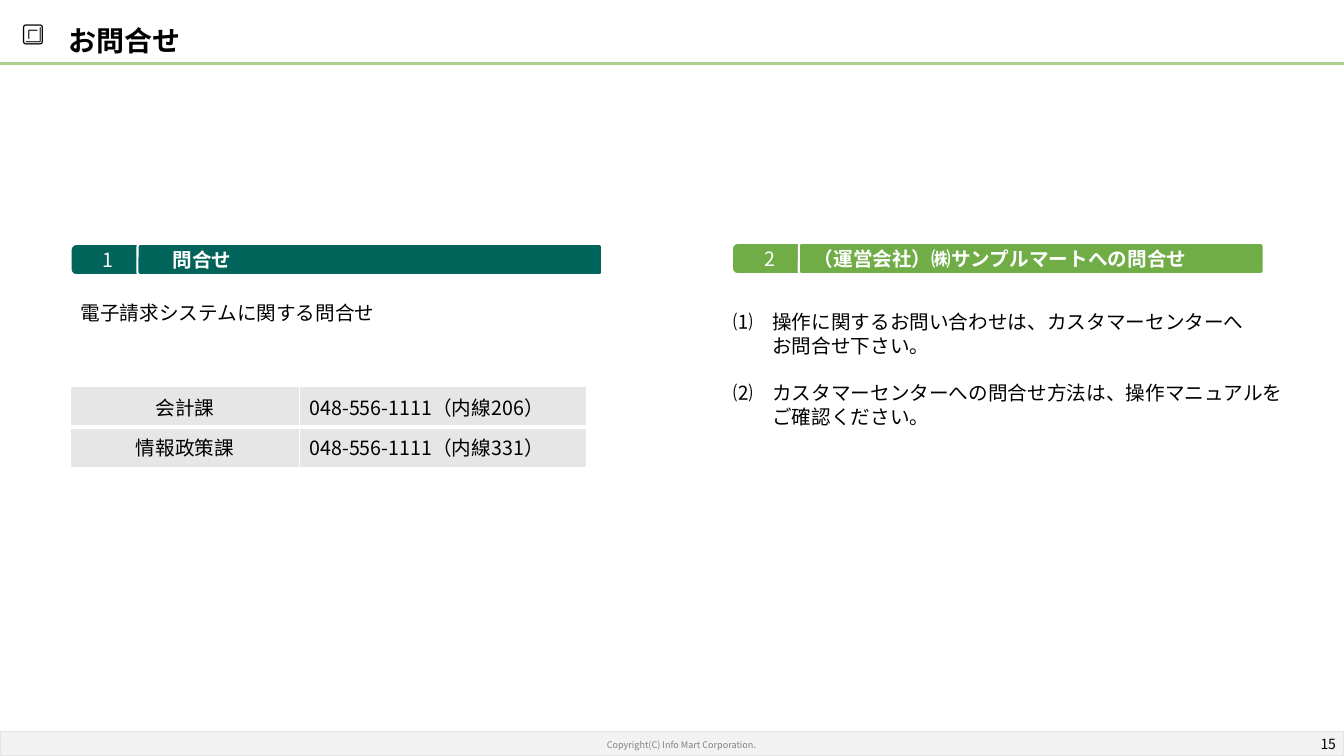
from dataclasses import dataclass

from lxml.etree import SubElement
from pptx import Presentation
from pptx.dml.color import RGBColor
from pptx.enum.shapes import MSO_CONNECTOR, MSO_SHAPE
from pptx.enum.text import MSO_ANCHOR, MSO_AUTO_SIZE, PP_ALIGN
from pptx.oxml.ns import qn
from pptx.util import Inches, Pt


@dataclass(frozen=True)
class Theme:
    font: str = "Noto Sans CJK JP"
    black: str = "000000"
    white: str = "FFFFFF"
    grey_text: str = "808080"
    footer: str = "F2F2F2"
    cell: str = "E7E6E6"
    rule: str = "A9D18E"
    teal: str = "00645A"
    green: str = "70AD47"
    title: float = 20
    icon: float = 16
    body: float = 14
    page: float = 10
    small: float = 6.5


class Deck:
    """Places elements by percent shares of the slide's width and height."""

    def __init__(self, theme):
        self.theme = theme
        self.prs = Presentation()
        self.prs.slide_width, self.prs.slide_height = Inches(13.33), Inches(7.5)
        self.slide = self.prs.slides.add_slide(self.prs.slide_layouts[1])

    def x(self, share):
        return int(self.prs.slide_width * share / 100)

    def y(self, share):
        return int(self.prs.slide_height * share / 100)

    def box(self, left, top, width, height):
        return self.x(left), self.y(top), self.x(width), self.y(height)

    def set_text(self, tf, lines, size, color=None, bold=False, para=None, **frame):
        """Fills a text frame; para and frame hold format values."""
        frame = {"word_wrap": True, "vertical_anchor": MSO_ANCHOR.TOP, **frame}
        for name, value in frame.items():
            setattr(tf, name, value)
        for i, line in enumerate(lines):
            p = tf.paragraphs[0] if i == 0 else tf.add_paragraph()
            for name, value in (para or {}).items():
                if not (i == 0 and name == "space_before"):
                    setattr(p, name, value)
            p.text = line
            for r in p.runs:
                self.style(r, size, color or self.theme.black, bold)

    def style(self, r, size, color, bold):
        r.font.color.rgb = RGBColor.from_string(color)
        for name, value in {"size": Pt(size), "bold": bold, "name": self.theme.font}.items():
            setattr(r.font, name, value)
        SubElement(r._r.get_or_add_rPr(), qn("a:ea"), typeface=self.theme.font)

    def place(self, sp, area):
        for name, value in zip(("left", "top", "width", "height"), self.box(*area)):
            setattr(sp, name, value)

    def title(self, area, text):
        sp = self.slide.shapes.title
        self.place(sp, area)
        self.set_text(sp.text_frame, [text], self.theme.title, bold=True,
                      para={"alignment": PP_ALIGN.LEFT, "line_spacing": 1.5},
                      auto_size=MSO_AUTO_SIZE.NONE)

    def numbered(self, area, items):
        """Hanging list: each mark is followed by a tab."""
        sp = self.slide.placeholders[1]
        self.place(sp, area)
        pitch = Pt(17)
        self.set_text(sp.text_frame, items, self.theme.body,
                      para={"line_spacing": pitch, "space_before": pitch},
                      auto_size=MSO_AUTO_SIZE.NONE)
        hang = Pt(2 * self.theme.body)
        for i, p in enumerate(sp.text_frame.paragraphs):
            if i == 0:
                p.space_before = Pt(0)
            pPr = p._p.get_or_add_pPr()
            pPr.set("marL", str(hang))
            pPr.set("indent", str(-hang))
            SubElement(pPr, qn("a:buNone"))

    def text(self, area, text, size, **options):
        sp = self.slide.shapes.add_textbox(*self.box(*area))
        self.set_text(sp.text_frame, [text], size, **options)

    def bar(self, area, fill, line, width, radius=0):
        sp = self.slide.shapes.add_shape(MSO_SHAPE.ROUNDED_RECTANGLE, *self.box(*area))
        sp.adjustments[0] = radius
        sp.shadow.inherit = False
        sp.fill.solid()
        sp.fill.fore_color.rgb = RGBColor.from_string(fill)
        sp.line.color.rgb = RGBColor.from_string(line)
        sp.line.width = Pt(width)
        return sp

    def heading(self, left, top, number, text, fill, inset):
        """Number badge with the section bar beside it."""
        t = self.theme
        parts = ((0, 5.63, 0.18, number, PP_ALIGN.CENTER, False, 0.1),
                 (4.98, 34.58, 0.09, text, PP_ALIGN.LEFT, True, inset))
        for offset, width, radius, words, align, bold, margin in parts:
            sp = self.bar((left + offset, top, width, 4.13), fill, t.white, 1.5, radius)
            self.set_text(sp.text_frame, [words], t.body, t.white, bold,
                          {"alignment": align}, vertical_anchor=MSO_ANCHOR.MIDDLE,
                          margin_left=Inches(margin))

    def rule(self, top, color, width):
        y = self.y(top)
        line = self.slide.shapes.add_connector(MSO_CONNECTOR.STRAIGHT, 0, y, self.x(100), y)
        line.line.color.rgb = RGBColor.from_string(color)
        line.line.width = Pt(width)
        SubElement(line._element.spPr, qn("a:effectLst"))

    def table(self, area, widths, rows):
        frame = self.slide.shapes.add_table(len(rows), len(widths), *self.box(*area))
        table = frame.table
        for column, width in zip(table.columns, widths):
            column.width = self.x(width)
        aligns = (PP_ALIGN.CENTER, PP_ALIGN.LEFT)
        for i, row in enumerate(rows):
            for j, words in enumerate(row):
                cell = table.cell(i, j)
                cell.vertical_anchor = MSO_ANCHOR.MIDDLE
                self.set_text(cell.text_frame, [words], self.theme.body,
                              para={"alignment": aligns[j]},
                              vertical_anchor=MSO_ANCHOR.MIDDLE)
                self.borders(cell, 3 if i == 0 else 1, 3 if i == 1 else 1)
                cell.fill.solid()
                cell.fill.fore_color.rgb = RGBColor.from_string(self.theme.cell)

    def borders(self, cell, bottom, top):
        tcPr = cell._tc.get_or_add_tcPr()
        for side, width in {"L": 1, "R": 1, "T": top, "B": bottom}.items():
            ln = SubElement(tcPr, qn(f"a:ln{side}"), w=str(Pt(width)))
            fill = SubElement(ln, qn("a:solidFill"))
            SubElement(fill, qn("a:srgbClr"), val=self.theme.white)


def main():
    t = Theme()
    deck = Deck(t)
    left, right = 5.25, 54.46

    # Footer
    deck.bar((0, 96.8, 100, 3.2), t.footer, t.cell, 1)
    deck.text((35.63, 97.2, 30.16, 2.8), "Copyright(C) Info Mart Corporation.", t.small,
              color=t.grey_text, para={"alignment": PP_ALIGN.CENTER})
    deck.text((95.2, 96.4, 4.8, 4), "15", t.page, para={"alignment": PP_ALIGN.RIGHT},
              vertical_anchor=MSO_ANCHOR.MIDDLE, margin_right=Inches(0.08))

    # Title band
    deck.rule(8.4, t.rule, 2)
    deck.text((0.9, 1.87, 5.55, 4.93), "🔳", t.icon)
    deck.title((4.35, 0.27, 37.88, 7.47), "お問合せ")

    # Left: city office contacts
    deck.heading(left, 32.27, "1", "問合せ", t.teal, 0.34)
    deck.text((left, 39.2, 40.29, 11.2), "電子請求システムに関する問合せ", t.body)
    deck.table((left, 51.07, 38.41, 10.8), (17.03, 21.38),
               [("会計課", "048-556-1111（内線206）"),
                ("情報政策課", "048-556-1111（内線331）")])

    # Right: operating company contacts
    deck.heading(right, 32.13, "2", "（運営会社）㈱サンプルマートへの問合せ", t.green, 0.14)
    deck.numbered((53.79, 40.27, 45, 16.27),
                  ["⑴\t操作に関するお問い合わせは、カスタマーセンターへ\vお問合せ下さい。",
                   "⑵\tカスタマーセンターへの問合せ方法は、操作マニュアルを\vご確認ください。"])

    deck.prs.save("out.pptx")


if __name__ == "__main__":
    main()
